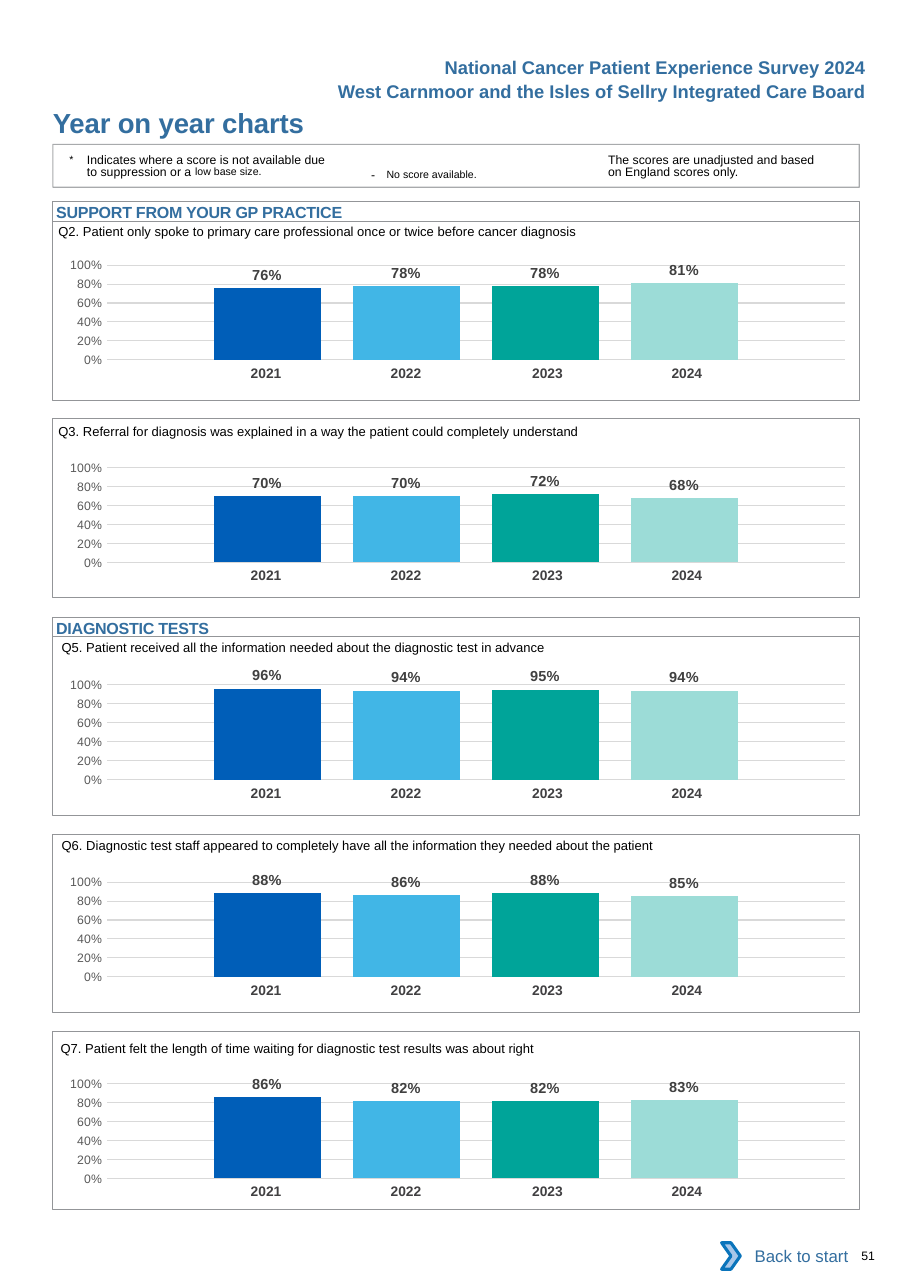
from dataclasses import dataclass

from lxml.etree import SubElement
from pptx import Presentation
from pptx.chart.data import CategoryChartData
from pptx.dml.color import RGBColor
from pptx.enum.chart import XL_CHART_TYPE, XL_LABEL_POSITION, XL_TICK_MARK
from pptx.enum.shapes import MSO_SHAPE
from pptx.enum.text import MSO_ANCHOR, PP_ALIGN
from pptx.oxml import parse_xml
from pptx.oxml.ns import nsdecls, qn
from pptx.util import Inches, Pt

# Content: each question has its text, yearly scores, text indent, text drop, chart drop
YEARS = ["2021", "2022", "2023", "2024"]
SECTIONS = [
    ("SUPPORT FROM YOUR GP PRACTICE", 2.01, [
        ("Q2. Patient only spoke to primary care professional once or twice before cancer diagnosis",
         (0.76, 0.78, 0.78, 0.81), 0.05, 0.02, 0.21),
        ("Q3. Referral for diagnosis was explained in a way the patient could completely understand",
         (0.70, 0.70, 0.72, 0.68), 0.05, 0.04, 0.26),
    ]),
    ("DIAGNOSTIC TESTS", 5.78, [
        ("Q5. Patient received all the information needed about the diagnostic test in advance",
         (0.96, 0.94, 0.95, 0.94), 0.08, 0.02, 0.25),
        ("Q6. Diagnostic test staff appeared to completely have all the information they needed "
         "about the patient", (0.88, 0.86, 0.88, 0.85), 0.08, 0.03, 0.25),
        ("Q7. Patient felt the length of time waiting for diagnostic test results was about right",
         (0.86, 0.82, 0.82, 0.83), 0.07, 0.08, 0.29),
    ]),
]
HEADER = ["National Cancer Patient Experience Survey 2024",
          "West Carnmoor and the Isles of Sellry Integrated Care Board"]

# Grid, in inches
PAGE_WIDTH, PAGE_HEIGHT = 8.26, 11.69
LEFT, PANEL_WIDTH, PANEL_HEIGHT, PANEL_PITCH = 0.48, 7.32, 1.62, 1.79
BAR_HEIGHT, CHART_LEFT, CHART_HEIGHT = 0.18, 0.39, 1.29
YEAR_LEFT, YEAR_DROP, YEAR_HEIGHT = 1.73, 1.05, 0.27
YEAR_COLUMNS = [(1.27, 0), (1.27, 0), (1.34, 0.04), (1.27, 0.12)]  # width, right margin
PLOT_AREA = {"x": 0.079, "y": 0.145, "w": 0.915, "h": 0.666}


@dataclass(frozen=True)
class Theme:
    font: str = "Arial"
    chart_font: str = "Calibri"
    heading: str = "336E9F"
    ink: str = "000000"
    year: str = "414042"
    label: str = "404040"
    axis: str = "595959"
    grid: str = "D9D9D9"
    border: str = "939598"
    white: str = "FFFFFF"
    arrow: str = "A8C7E9"
    arrow_edge: str = "0A74BB"
    bars: tuple = ("005EB8", "41B6E6", "00A499", "9CDCD7")
    title_size: float = 18
    header_size: float = 12
    link_size: float = 11
    section_size: float = 10.5
    chart_size: float = 10
    label_size: float = 9.5
    year_size: float = 9
    question_size: float = 8.5
    small_size: float = 8
    raised_size: float = 12


THEME = Theme()


def style_font(font, size, colour, bold=False, name=THEME.font):
    font.name, font.size, font.bold = name, Pt(size), bold
    font.color.rgb = RGBColor.from_string(colour)


def add_span(para, text, size, colour=THEME.ink, bold=False, spacing=0, raised=0):
    span = para.add_run()
    span.text = text
    style_font(span.font, size, colour, bold)
    properties = span.font._element
    if spacing:
        properties.set("spc", str(round(spacing * 100)))
    if raised:
        properties.set("baseline", str(raised * 1000))


def set_margins(target, left=0, top=0, right=0, bottom=0):
    target.margin_left, target.margin_top = Inches(left), Inches(top)
    target.margin_right, target.margin_bottom = Inches(right), Inches(bottom)


def add_text(page, area, spans, margins=(0, 0, 0, 0), align=PP_ALIGN.LEFT, line=None, hang=0):
    box = page.shapes.add_textbox(*map(Inches, area))
    frame = box.text_frame
    frame.word_wrap = True
    set_margins(frame, *margins)
    para = frame.paragraphs[0]
    para.alignment = align
    if line:
        para.line_spacing = Pt(line)
    if hang:
        properties = para._p.get_or_add_pPr()
        properties.set("marL", str(Inches(hang)))
        properties.set("indent", str(-Inches(hang)))
    for text, style in spans:
        add_span(para, text, **style)


def add_box(page, area, fill=None, line=None, weight=0.5, kind=MSO_SHAPE.RECTANGLE):
    box = page.shapes.add_shape(kind, *map(Inches, area))
    box.shadow.inherit = False
    if fill:
        box.fill.solid()
        box.fill.fore_color.rgb = RGBColor.from_string(fill)
    else:
        box.fill.background()
    if line:
        box.line.color.rgb = RGBColor.from_string(line)
        box.line.width = Pt(weight)
    else:
        box.line.fill.background()
    return box


def add_years(page, top):
    width = sum(column for column, _ in YEAR_COLUMNS)
    table = page.shapes.add_table(1, len(YEARS), *map(
        Inches, (YEAR_LEFT, top, width, YEAR_HEIGHT))).table
    table.first_row = table.horz_banding = False
    for index, (year, (column, margin)) in enumerate(zip(YEARS, YEAR_COLUMNS)):
        table.columns[index].width = Inches(column)
        cell = table.cell(0, index)
        cell.fill.background()
        set_margins(cell, 0.1, 0.05, margin, 0.05)
        para = cell.text_frame.paragraphs[0]
        para.alignment = PP_ALIGN.CENTER
        add_span(para, year, THEME.year_size, THEME.year, bold=True)


def add_scores(page, top, scores):
    data = CategoryChartData(number_format="0%")
    data.categories = ["1"]
    for index, score in enumerate(scores, 1):
        data.add_series(f"Series {index}", [score])
    area = map(Inches, (CHART_LEFT, top, PANEL_WIDTH, CHART_HEIGHT))
    chart = page.shapes.add_chart(XL_CHART_TYPE.COLUMN_CLUSTERED, *area, data).chart
    chart.has_legend = chart.has_title = False
    style_font(chart.font, THEME.chart_size, THEME.ink, name=THEME.chart_font)
    chart.category_axis.visible = False
    # Percentage axis
    axis = chart.value_axis
    axis.minimum_scale, axis.maximum_scale, axis.major_unit = 0, 1, 0.2
    axis.major_tick_mark = axis.minor_tick_mark = XL_TICK_MARK.NONE
    axis.format.line.fill.background()
    axis.major_gridlines.format.line.color.rgb = RGBColor.from_string(THEME.grid)
    axis.major_gridlines.format.line.width = Pt(0.75)
    axis.tick_labels.number_format, axis.tick_labels.number_format_is_linked = "0%", False
    style_font(axis.tick_labels.font, THEME.small_size, THEME.axis)
    # Bars and their labels
    plot = chart.plots[0]
    plot.gap_width, plot.overlap, plot.vary_by_categories = 200, -30, False
    for series, colour in zip(plot.series, THEME.bars):
        series.format.fill.solid()
        series.format.fill.fore_color.rgb = RGBColor.from_string(colour)
        labels = series.data_labels
        labels.show_value, labels.position = True, XL_LABEL_POSITION.OUTSIDE_END
        labels.number_format, labels.number_format_is_linked = "0%", False
        style_font(labels.font, THEME.label_size, THEME.label, bold=True)
    # Fixed inner plot area
    modes = '<c:layoutTarget val="inner"/><c:xMode val="edge"/><c:yMode val="edge"/>'
    sizes = "".join(f'<c:{side} val="{share}"/>' for side, share in PLOT_AREA.items())
    plot_area = chart._chartSpace.chart.plotArea
    for layout in plot_area.findall(qn("c:layout")):
        plot_area.remove(layout)
    plot_area.insert(0, parse_xml(f'<c:layout {nsdecls("c")}><c:manualLayout>{modes}{sizes}'
                                  '</c:manualLayout></c:layout>'))


def add_heading(page):
    style = {"size": THEME.header_size, "colour": THEME.heading, "bold": True}
    for row, text in enumerate(HEADER):
        add_text(page, (2.5, 0.46 + 0.22 * row, 5.46, 0.3), [(text, style)],
                 (0.1, 0.05, 0.1, 0.05), PP_ALIGN.RIGHT)
    title = {"size": THEME.title_size, "colour": THEME.heading, "bold": True, "spacing": -0.1}
    add_text(page, (LEFT, 0.96, 4.5, 0.3), [("Year on year charts", title)])


def add_notes_strip(page):
    small, raised = {"size": THEME.small_size}, {"size": THEME.raised_size, "raised": 3}
    add_text(page, (5.52, 1.37, 2.01, 0.27),
             [("The scores are unadjusted and based on England scores only.", small)],
             (0, 0.03, 0, 0), line=8.1)
    add_text(page, (3.27, 1.41, 1.83, 0.24),
             [("- ", {**small, "spacing": 2.6}), ("No score available.", raised)],
             (0.1, 0.05, 0.1, 0.05))
    add_text(page, (0.63, 1.38, 2.4, 0.25),
             [("*\t", raised), ("Indicates where a score is not available due to suppression or a ", small),
              ("low base size.", {**raised, "raised": 7})], (0, 0.03, 0, 0), line=8.1, hang=0.16)
    strip = add_box(page, (LEFT, 1.31, PANEL_WIDTH, 0.39), line=THEME.border, weight=0.75)
    colour = strip.line._ln.find(".//" + qn("a:srgbClr"))
    SubElement(colour, qn("a:alpha")).set("val", "80000")


def add_section(page, name, first_top, questions):
    bar = (LEFT, first_top - BAR_HEIGHT, PANEL_WIDTH, BAR_HEIGHT)
    add_box(page, bar, line=THEME.border)
    add_text(page, bar, [(name, {"size": THEME.section_size, "colour": THEME.heading,
                                 "bold": True, "spacing": -0.15})], (0.03, 0.01, 0, 0))
    for row, (question, scores, indent, text_drop, chart_drop) in enumerate(questions):
        top = first_top + row * PANEL_PITCH
        add_text(page, (LEFT + indent, top + text_drop, 7.2, 0.15),
                 [(question, {"size": THEME.question_size})])
        add_years(page, top + chart_drop + YEAR_DROP)
        add_scores(page, top + chart_drop, scores)
        add_box(page, (LEFT, top, PANEL_WIDTH, PANEL_HEIGHT), line=THEME.border)


def add_footer(page):
    button = add_box(page, (6.62, 11.19, 1.18, 0.42), fill=THEME.white)
    button.text_frame.vertical_anchor = MSO_ANCHOR.MIDDLE
    para = button.text_frame.paragraphs[0]
    para.alignment = PP_ALIGN.RIGHT
    add_span(para, "Back to start", THEME.link_size, THEME.heading)
    add_box(page, (6.55, 11.28, 0.17, 0.24), THEME.arrow, THEME.arrow_edge, 2, MSO_SHAPE.CHEVRON)
    add_text(page, (7.72, 11.33, 0.51, 0.13), [("51", {"size": THEME.small_size})], (0.1, 0, 0, 0))


def main():
    deck = Presentation()
    deck.slide_width, deck.slide_height = Inches(PAGE_WIDTH), Inches(PAGE_HEIGHT)
    page = deck.slides.add_slide(deck.slide_layouts[6])
    add_heading(page)
    add_notes_strip(page)
    for section in SECTIONS:
        add_section(page, *section)
    add_footer(page)
    deck.save("out.pptx")


if __name__ == "__main__":
    main()
